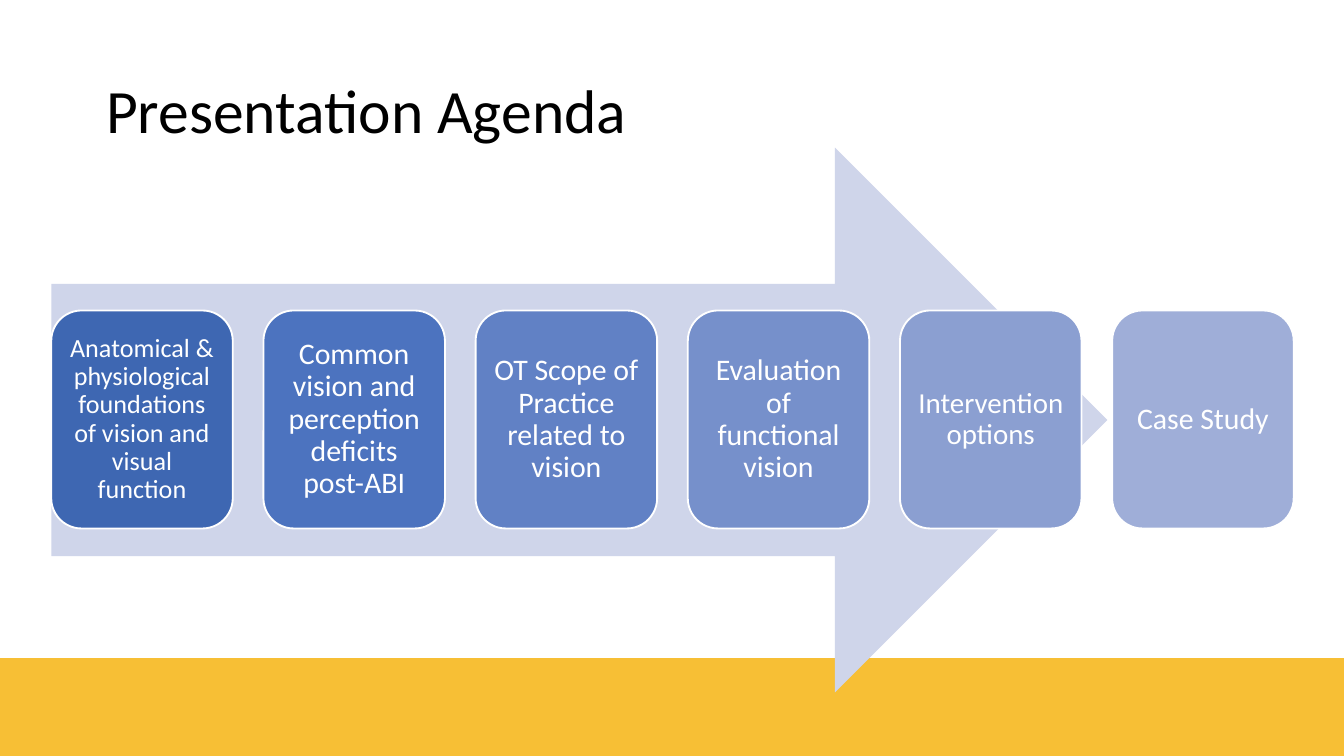
from pptx import Presentation
from pptx.dml.color import RGBColor
from pptx.enum.shapes import MSO_SHAPE as Shape
from pptx.enum.text import MSO_ANCHOR as Anchor, MSO_AUTO_SIZE as AutoSize, PP_ALIGN as Align
from pptx.util import Cm, Pt

FONT = "Calibri"
COLORS = {
    "band": "F7BF35",
    "arrow": "CFD5EA",
    "white": "FFFFFF",
    "black": "000000",
}
STEPS = [
    ("Anatomical & physiological foundations of vision and visual function", 14, "3E67B2"),
    ("Common vision and perception deficits post-ABI", 16, "4C73BF"),
    ("OT Scope of Practice related to vision", 16, "6181C5"),
    ("Evaluation of functional vision", 16, "7690CB"),
    ("Intervention options", 15.5, "8B9FD1"),
    ("Case Study", 16, "9FAED8"),
]
LEFT = 0.97
STEP_TOP, STEP_WIDTH, STEP_HEIGHT, STEP_PITCH = 5.87, 3.43, 4.12, 4.01


def rgb(value):
    return RGBColor.from_string(value)


def write(tf, text, size, color, align):
    tf.word_wrap = True
    tf.auto_size = AutoSize.NONE
    tf.vertical_anchor = Anchor.MIDDLE
    p = tf.paragraphs[0]
    p.alignment = align
    p.line_spacing = 0.9
    r = p.add_run()
    r.text = text
    r.font.name = FONT
    r.font.size = Pt(size)
    r.font.color.rgb = rgb(color)


def add_block(s, kind, left, top, width, height, fill):
    sp = s.shapes.add_shape(kind, Cm(left), Cm(top), Cm(width), Cm(height))
    sp.shadow.inherit = False
    sp.fill.solid()
    sp.fill.fore_color.rgb = rgb(fill)
    sp.line.fill.background()
    return sp


def add_step(s, index, text, size, fill):
    sp = add_block(s, Shape.ROUNDED_RECTANGLE, LEFT + index * STEP_PITCH,
                   STEP_TOP, STEP_WIDTH, STEP_HEIGHT, fill)
    sp.line.color.rgb = rgb(COLORS["white"])
    sp.line.width = Pt(1)
    tf = sp.text_frame
    tf.margin_left = tf.margin_right = tf.margin_top = tf.margin_bottom = Cm(0.17)
    write(tf, text, size, COLORS["white"], Align.CENTER)


def set_title(s, text):
    title = s.shapes.title
    title.left, title.top = Cm(1.75), Cm(0.76)
    title.width, title.height = Cm(21.9), Cm(2.76)
    write(title.text_frame, text, 33, COLORS["black"], Align.LEFT)


def main():
    prs = Presentation()
    prs.slide_width, prs.slide_height = Cm(25.4), Cm(14.29)
    s = prs.slides.add_slide(prs.slide_layouts[5])
    set_title(s, "Presentation Agenda")
    add_block(s, Shape.RECTANGLE, 0, 12.44, 25.4, 1.85, COLORS["band"])
    add_block(s, Shape.RIGHT_ARROW, LEFT, 2.79, 19.96, 10.3, COLORS["arrow"])
    for index, (text, size, fill) in enumerate(STEPS):
        add_step(s, index, text, size, fill)
    prs.save("out.pptx")


if __name__ == "__main__":
    main()
